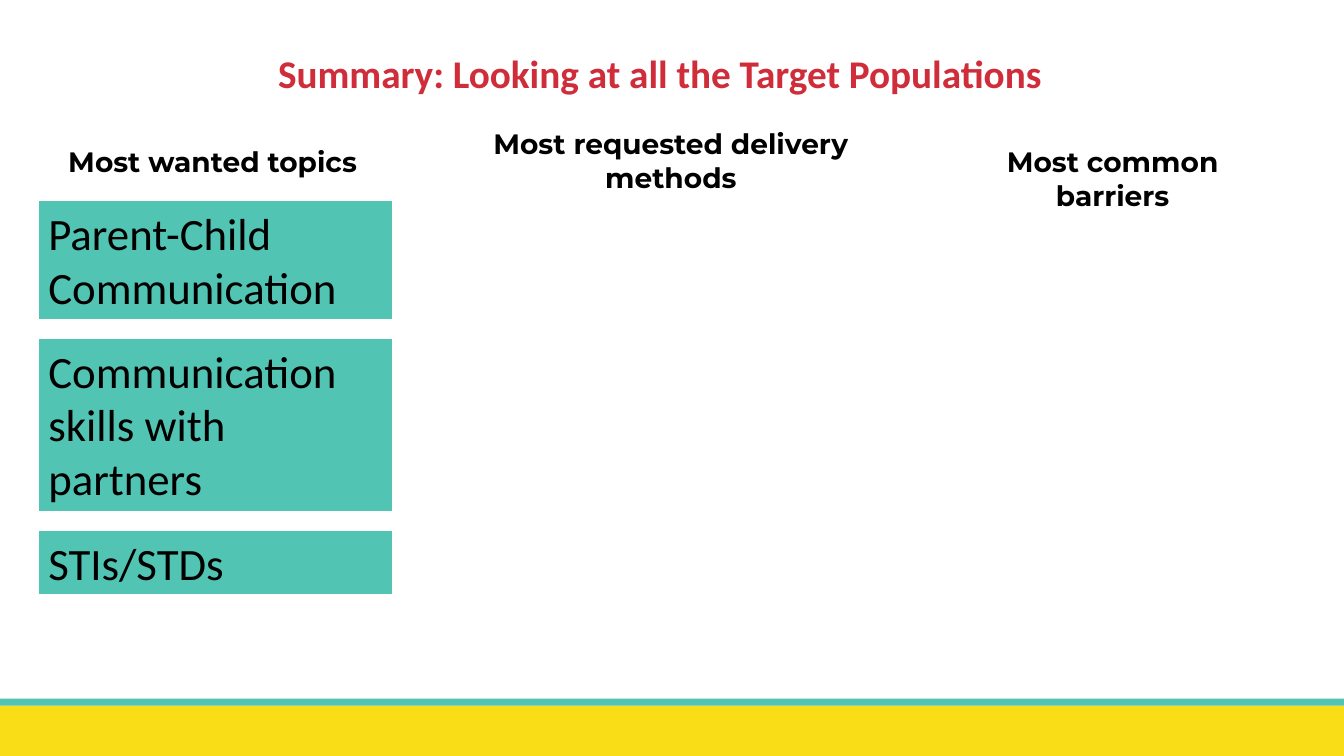
from pptx import Presentation
from pptx.dml.color import RGBColor
from pptx.enum.shapes import MSO_SHAPE
from pptx.enum.text import MSO_ANCHOR, PP_ALIGN
from pptx.util import Pt

RECT = MSO_SHAPE.RECTANGLE
TOP = MSO_ANCHOR.TOP
LEFT, CENTER = PP_ALIGN.LEFT, PP_ALIGN.CENTER

COLORS = {
    "red": "CF2D3A",
    "teal": "51C4B4",
    "yellow": "F9DD16",
    "black": "000000",
    "white": "FFFFFF",
}
TITLE = {"name": "Calibri", "size": Pt(28), "bold": True}
HEAD = {"name": "Montserrat", "size": Pt(20), "bold": True}
TOPIC = {"name": "Calibri", "size": Pt(32), "bold": False}

HEADS = [
    ("Most wanted topics", 27.4, 100, 249, 32),
    ("Most requested delivery methods", 319, 87, 320.4, 55.5),
    ("Most common barriers", 670.3, 100, 249, 32),
]
TOPICS = [
    ("Parent-Child Communication", 2),
    ("Communication skills with partners", 3),
    ("STIs/STDs", 1),
]
TOPIC_TOP, TOPIC_GAP = 143.3, 13.3
LINE_STEP, PADDING = 38.9, 7.2


def color(name):
    return RGBColor.from_string(COLORS[name])


def write(shape, text, style, tint, align):
    frame = shape.text_frame
    frame.word_wrap = True
    frame.vertical_anchor = TOP
    para = frame.paragraphs[0]
    para.alignment = align
    run = para.add_run()
    run.text = text
    for key, value in style.items():
        setattr(run.font, key, value)
    run.font.color.rgb = color(tint)


def add_label(slide, text, box, style, tint):
    label = slide.shapes.add_textbox(*map(Pt, box))
    write(label, text, style, tint, CENTER)


def add_block(slide, box, fill):
    block = slide.shapes.add_shape(RECT, *map(Pt, box))
    block.shadow.inherit = False
    block.fill.solid()
    block.fill.fore_color.rgb = color(fill)
    block.line.fill.background()
    return block


def add_topic(slide, text, box):
    block = add_block(slide, box, "teal")
    block.line.color.rgb = color("white")
    block.line.width = Pt(0.75)
    write(block, text, TOPIC, "black", LEFT)


def main():
    deck = Presentation()
    deck.slide_width, deck.slide_height = Pt(960), Pt(540)
    slide = deck.slides.add_slide(deck.slide_layouts[6])

    add_block(slide, (0, 504, 960, 36), "yellow")
    add_block(slide, (0, 499, 960, 5), "teal")
    add_label(slide, "Summary: Looking at all the Target Populations",
              (84.2, 31.7, 774, 41), TITLE, "red")
    for text, *box in HEADS:
        add_label(slide, text, box, HEAD, "black")

    top = TOPIC_TOP
    for text, lines in TOPICS:
        height = lines * LINE_STEP + PADDING
        add_topic(slide, text, (27.4, top, 252.7, height))
        top += height + TOPIC_GAP

    deck.save("out.pptx")


if __name__ == "__main__":
    main()
